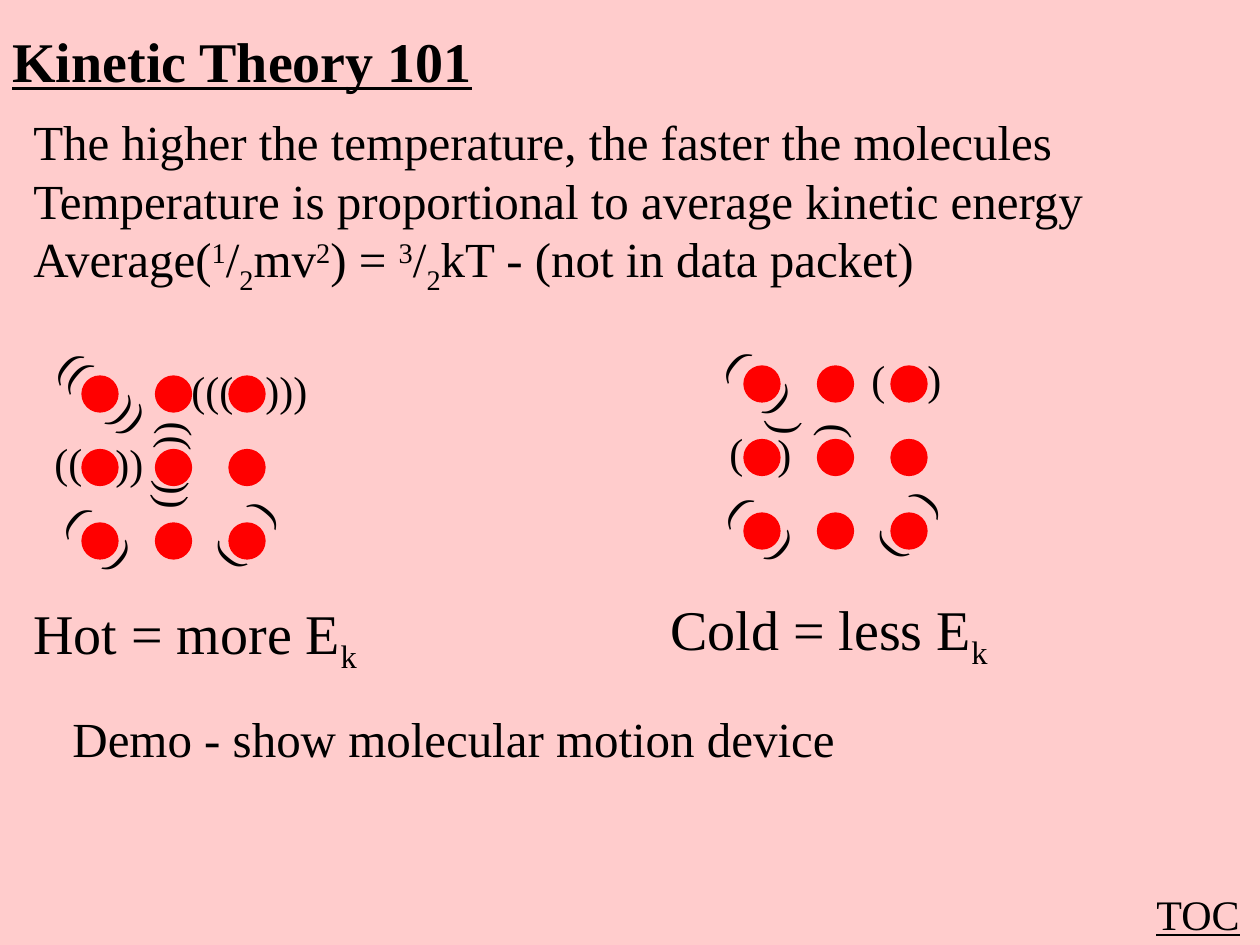
from pptx import Presentation
from pptx.dml.color import RGBColor
from pptx.enum.shapes import MSO_SHAPE
from pptx.enum.text import MSO_AUTO_SIZE
from pptx.util import Emu, Pt

OVAL = MSO_SHAPE.OVAL
GROW = MSO_AUTO_SIZE.SHAPE_TO_FIT_TEXT

PINK = RGBColor(0xFF, 0xCC, 0xCC)
RED = RGBColor(0xFF, 0x00, 0x00)
BLACK = RGBColor(0x00, 0x00, 0x00)
FONT = "Times New Roman"

DOT = 32        # molecule diameter
SPAN = 147      # first to last molecule in a row or column
MARK_H = 63     # height of a motion mark
SUPER, SUB = 30000, -25000

# Motion marks: text, left, top, width, rotation, extra points in the gap
HOT_MARKS = [
    (")))", 169, -20, 67, 0, 0),
    ("(((", 95, -20, 67, 0, 0),
    ("((", -42, 52, 53, 0, 0),
    ("))", 19, 53, 53, 0, 0),
    ("( )", -30, 126, 96, 40.1, 18),
    ("(( ))", -41, -19, 123, 40.1, 18),
    ("(( ))", 37, 57, 113, 93.4, 12),
    ("( )", 120, 131, 96, 129.3, 18),
]
COLD_MARKS = [
    (")", 169, -21, 39, 0, 0),
    ("(", 113, -21, 39, 0, 0),
    ("(", -29, 52, 39, 0, 0),
    (")", 19, 53, 39, 0, 0),
    ("( )", -30, 126, 96, 40.1, 18),
    ("( )", -32, -20, 96, 40.1, 18),
    ("( )", 50, 55, 84, 93.4, 12),
    ("( )", 120, 131, 96, 129.3, 18),
]
FACTS = [
    [("The higher the temperature, the faster the molecules", 0)],
    [("Temperature is proportional to average kinetic energy", 0)],
    [("Average(", 0), ("1", SUPER), ("/", 0), ("2", SUB), ("mv", 0),
     ("2", SUPER), (") = ", 0), ("3", SUPER), ("/", 0), ("2", SUB),
     ("kT - (not in data packet)", 0)],
]


def px(n):
    return Emu(round(n * 914400 / 126))


def add_run(p, text, size, base=0):
    r = p.add_run()
    r.text = text
    r.font.name = FONT
    r.font.size = Pt(size)
    r.font.color.rgb = BLACK
    if base:
        r.font._element.set("baseline", str(base))
    return r


def add_text(shapes, box, lines, size, wrap=False):
    """Text box; each line is a list of (text, baseline shift)."""
    sp = shapes.add_textbox(*map(px, box))
    tf = sp.text_frame
    tf.word_wrap = wrap
    tf.auto_size = GROW
    for i, line in enumerate(lines):
        p = tf.add_paragraph() if i else tf.paragraphs[0]
        for text, base in line:
            add_run(p, text, size, base)
    return sp


def add_underlined(shapes, box, text, size, bold=False):
    sp = add_text(shapes, box, [[(text, 0)]], size)
    font = sp.text_frame.paragraphs[0].runs[0].font
    font.underline = True
    font.bold = bold


def add_molecule(shapes, x, y):
    sp = shapes.add_shape(OVAL, px(x), px(y), px(DOT), px(DOT))
    sp.shadow.inherit = False
    sp.fill.solid()
    sp.fill.fore_color.rgb = RED
    sp.line.color.rgb = RED
    sp.line.width = Pt(3)


def add_mark(shapes, box, text, rotation, gap):
    """Brackets around a molecule; a space in the text is widened by gap."""
    left, space, right = text.partition(" ")
    parts = [(part, 0) for part in (left, space, right) if part]
    sp = add_text(shapes, box, [parts], 24)
    sp.rotation = rotation
    if gap:
        r = sp.text_frame.paragraphs[0].runs[1]
        r.font._element.set("spc", str(gap * 100))


def add_sample(slide, x, y, marks, caption, caption_box):
    """3 x 3 molecules at x, y with motion marks and a caption."""
    shapes = slide.shapes.add_group_shape().shapes
    for col in range(3):
        for row in range(3):
            add_molecule(shapes, x + col * SPAN / 2, y + row * SPAN / 2)
    for text, dx, dy, w, rotation, gap in marks:
        add_mark(shapes, (x + dx, y + dy, w, MARK_H), text, rotation, gap)
    dx, dy, w, h = caption_box
    add_text(shapes, (x + dx, y + dy, w, h), [[(caption, 0), ("k", SUB)]], 32)


def main():
    prs = Presentation()
    prs.slide_width, prs.slide_height = px(1260), px(945)
    slide = prs.slides.add_slide(prs.slide_layouts[6])
    slide.background.fill.solid()
    slide.background.fill.fore_color.rgb = PINK

    # Heading, contents label and facts
    shapes = slide.shapes
    add_underlined(shapes, (0, 20, 486, 79), "Kinetic Theory 101", 32, bold=True)
    add_underlined(shapes, (1144, 882, 110, 63), "TOC", 24)
    add_text(shapes, (21, 105, 1197, 189), FACTS, 28, wrap=True)

    # Hot and cold samples
    add_sample(slide, 84, 378, HOT_MARKS, "Hot = more E", (-63, 214, 350, 79))
    add_sample(slide, 746, 368, COLD_MARKS, "Cold = less E", (-88, 220, 344, 79))

    # Demonstration
    add_text(shapes, (60, 702, 788, 72),
             [[("Demo - show molecular motion device", 0)]], 28)

    prs.save("out.pptx")


if __name__ == "__main__":
    main()
